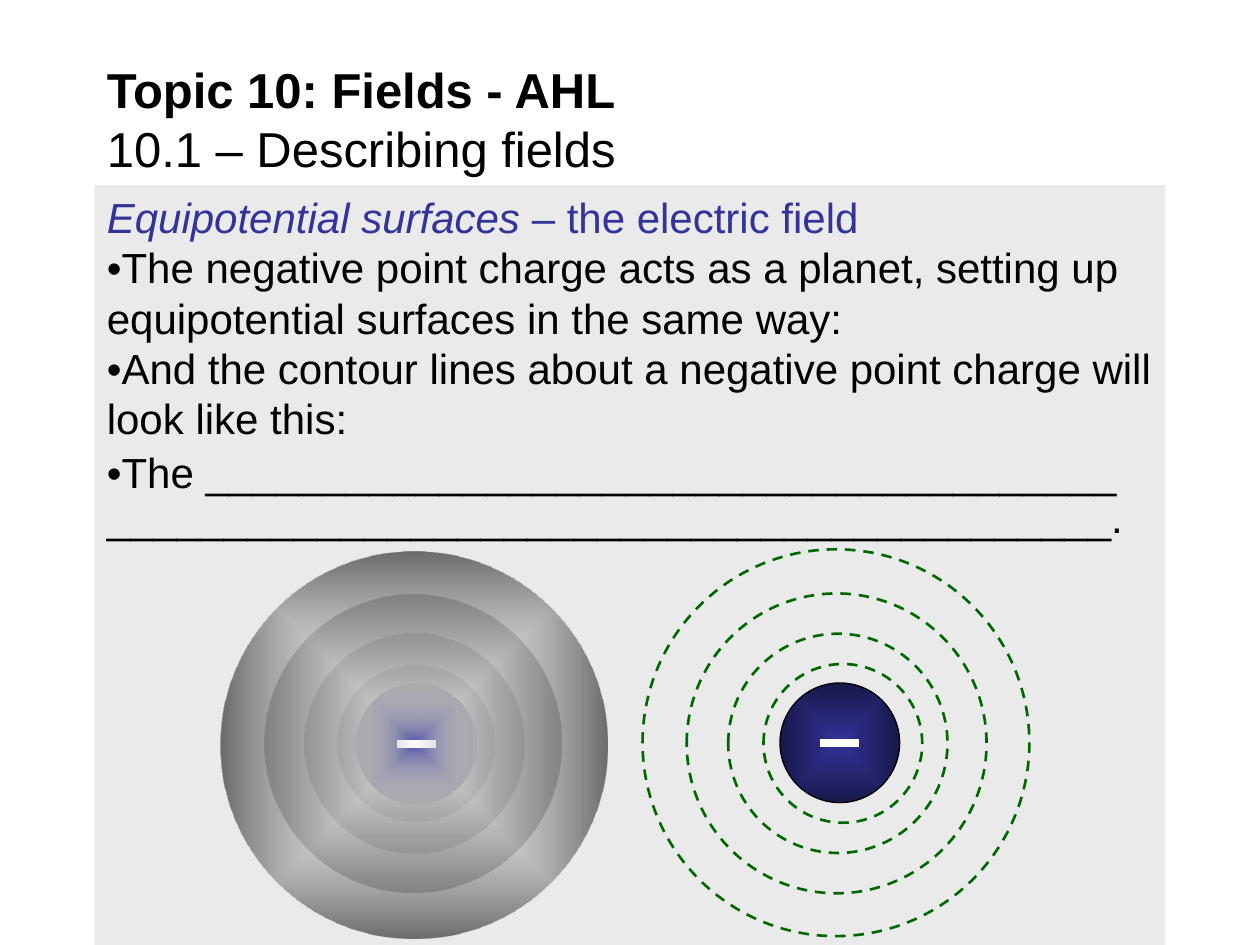
from dataclasses import dataclass

import pptx
import pptx.dml.color
import pptx.enum.dml
import pptx.enum.shapes
import pptx.enum.text
import pptx.oxml
import pptx.oxml.ns
import pptx.util

# The page is a grid of 100 columns by 75 rows
COLUMNS, ROWS = 100, 75
CELL = pptx.util.Inches(0.1)
COLORS = {
    "panel": "EAEAEA", "heading": "333399", "text": "000000", "sign": "FFFFFF",
    "charge": "333399", "charge edge": "18184A",
    "shell": "EAEAEA", "shell edge": "6C6C6C", "contour": "006600",
}
SHAPES = pptx.enum.shapes.MSO_SHAPE
NONE = pptx.enum.text.MSO_AUTO_SIZE.NONE
MIDDLE = pptx.enum.text.MSO_ANCHOR.MIDDLE
TOP = pptx.enum.text.MSO_ANCHOR.TOP
LEFT = pptx.enum.text.PP_ALIGN.LEFT


@dataclass
class Circle:
    column: float  # centre
    row: float
    diameter: float


@dataclass
class Span:
    words: str
    size: int = 24
    color: str = "text"
    bold: bool = False
    italic: bool = False


CHARGES = [Circle(66.65, 58.95, 9.5), Circle(33.05, 59.05, 9.5)]
SHELLS = [Circle(33, 59, 12.4), Circle(32.9, 59, 17.4),
          Circle(32.8, 59, 23.6), Circle(32.85, 59.15, 30.7)]
CONTOURS = [Circle(66.9, 59, 12.6), Circle(66.5, 59, 17.4),
            Circle(66.4, 59, 23.8), Circle(66.35, 58.95, 30.7)]
TITLE = [[Span("Topic 10: Fields - AHL\v", 28, bold=True),
          Span("10.1 – Describing fields", 28)]]
BODY = [
    [Span("Equipotential surfaces ", color="heading", italic=True),
     Span("– the electric field", color="heading")],
    [Span("•The negative point charge acts as a planet, setting up "
          "equipotential surfaces in the same way:")],
    [Span("•And the contour lines about a negative point charge will "
          "look like this:")],
    [Span("•The " + "_" * 39 + " " + "_" * 43 + ".")],
]


def cells(count: float) -> int:
    return round(count * CELL)


def rgb(name: str) -> pptx.dml.color.RGBColor:
    return pptx.dml.color.RGBColor.from_string(COLORS[name])


def apply(target, values: dict) -> None:
    for name, value in values.items():
        setattr(target, name, value)


def write(box, paragraphs: list[list[Span]], anchor) -> None:
    apply(box.text_frame, {"word_wrap": True, "auto_size": NONE,
                           "vertical_anchor": anchor})
    for index, spans in enumerate(paragraphs):
        para = (box.text_frame.add_paragraph() if index
                else box.text_frame.paragraphs[0])
        para.alignment = LEFT
        for span in spans:
            # A vertical tab marks a line break after the words
            run = para.add_run()
            run.text = span.words.rstrip("\v")
            apply(run.font, {"name": "Arial", "size": pptx.util.Pt(span.size),
                             "bold": span.bold, "italic": span.italic})
            run.font.color.rgb = rgb(span.color)
            if span.words.endswith("\v"):
                para.add_line_break()


def draw_circle(shapes, circle: Circle):
    corner = [cells(center - circle.diameter / 2)
              for center in (circle.column, circle.row)]
    side = cells(circle.diameter)
    shape = shapes.add_shape(SHAPES.OVAL, *corner, side, side)
    shape.shadow.inherit = False
    shape.fill.background()
    shape.line.fill.background()
    return shape


def shade(shape, inner: str, outer: str, inner_alpha: int = 100) -> None:
    """Fill from the centre outwards; alpha is in percent."""
    gradient = pptx.oxml.parse_xml(
        f'<a:gradFill {pptx.oxml.ns.nsdecls("a")} rotWithShape="1"><a:gsLst>'
        f'<a:gs pos="0"><a:srgbClr val="{COLORS[inner]}">'
        f'<a:alpha val="{inner_alpha * 1000}"/></a:srgbClr></a:gs>'
        f'<a:gs pos="100000"><a:srgbClr val="{COLORS[outer]}"/></a:gs></a:gsLst>'
        '<a:path path="shape"><a:fillToRect l="50000" t="50000" r="50000" '
        'b="50000"/></a:path></a:gradFill>')
    properties = shape.element.spPr
    properties.replace(properties.find(pptx.oxml.ns.qn("a:noFill")), gradient)


def outline(shape, color: str, width: float) -> None:
    shape.line.color.rgb = rgb(color)
    shape.line.width = pptx.util.Pt(width)


def draw_charge(page, circle: Circle) -> None:
    group = page.shapes.add_group_shape()
    ball = draw_circle(group.shapes, circle)
    shade(ball, "charge", "charge edge")
    outline(ball, "text", 0.75)
    half = 1.55
    minus = group.shapes.add_connector(
        pptx.enum.shapes.MSO_CONNECTOR.STRAIGHT,
        cells(circle.column - half), cells(circle.row),
        cells(circle.column + half), cells(circle.row))
    outline(minus, "sign", 4.5)
    minus.element.spPr.append(pptx.oxml.parse_xml(
        f'<a:effectLst {pptx.oxml.ns.nsdecls("a")}/>'))


def main() -> None:
    deck = pptx.Presentation()
    apply(deck, {"slide_width": cells(COLUMNS), "slide_height": cells(ROWS)})
    page = deck.slides.add_slide(deck.slide_layouts[6])

    # Text panel
    panel = page.shapes.add_shape(SHAPES.RECTANGLE, cells(7.5), cells(14.7),
                                  cells(85), cells(60.3))
    panel.shadow.inherit = False
    panel.fill.solid()
    panel.fill.fore_color.rgb = rgb("panel")
    panel.line.fill.background()
    write(panel, BODY, TOP)
    apply(panel.text_frame.paragraphs[-1],
          {"line_spacing": 0.9, "space_before": pptx.util.Pt(4.8)})

    # Point charges
    for circle in CHARGES:
        draw_charge(page, circle)

    # Title
    title = page.shapes.add_textbox(cells(7.5), cells(4.5), cells(85), cells(9.8))
    write(title, TITLE, MIDDLE)

    # Equipotential surfaces
    for circle in SHELLS:
        shade(draw_circle(page.shapes, circle), "shell", "shell edge", 4)

    # Contour lines
    for circle in CONTOURS:
        ring = draw_circle(page.shapes, circle)
        outline(ring, "contour", 1.5)
        ring.line.dash_style = pptx.enum.dml.MSO_LINE.DASH

    deck.save("out.pptx")


if __name__ == "__main__":
    main()
